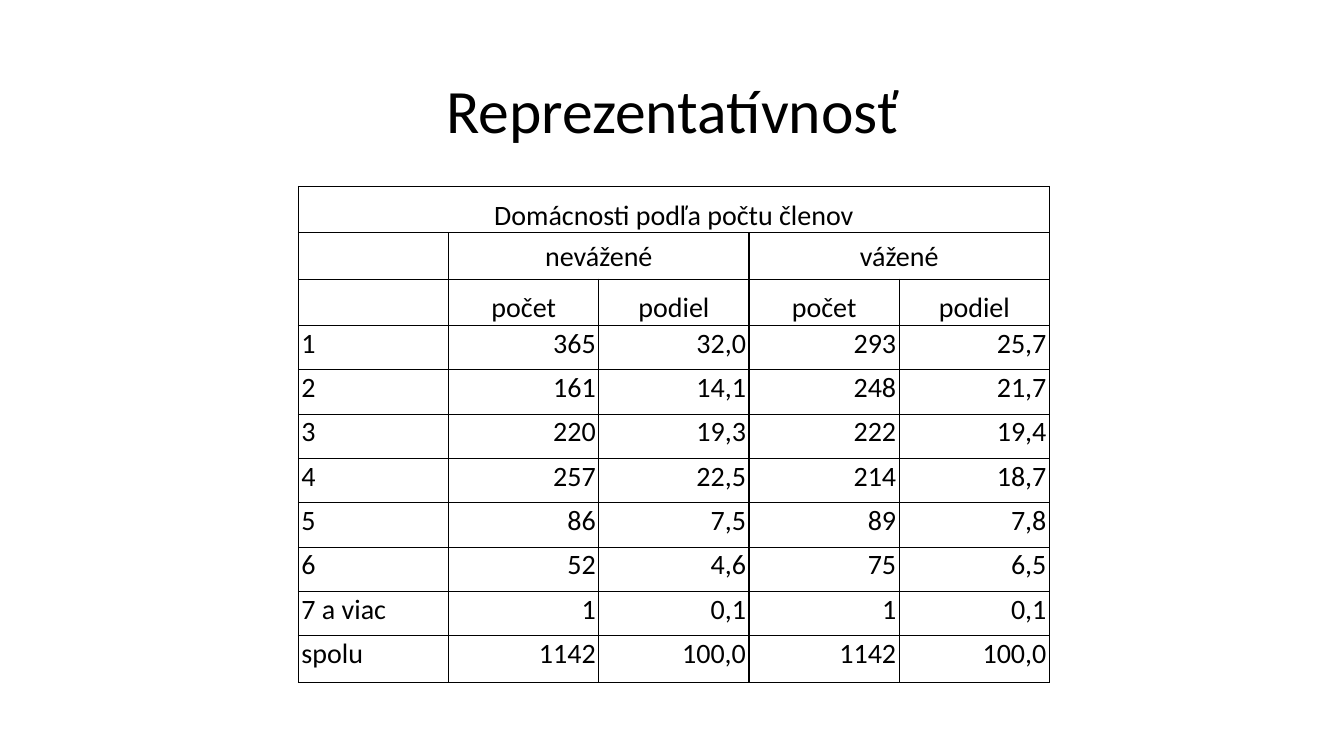
from pptx import Presentation
from pptx.dml.color import RGBColor
from pptx.enum.text import MSO_ANCHOR, PP_ALIGN
from pptx.oxml import parse_xml
from pptx.oxml.ns import nsdecls
from pptx.util import Inches, Pt

COLORS = {"text": "000000", "border": "000000"}
FONT = "Calibri"
COLUMN_WIDTH = 1.49
ROW_HEIGHTS = [0.46] * 3 + [0.44] * 7 + [0.46]
ROWS = [
    ["Domácnosti podľa počtu členov", "", "", "", ""],
    ["", "nevážené", "", "vážené", ""],
    ["", "počet", "podiel", "počet", "podiel"],
    ["1", "365", "32,0", "293", "25,7"],
    ["2", "161", "14,1", "248", "21,7"],
    ["3", "220", "19,3", "222", "19,4"],
    ["4", "257", "22,5", "214", "18,7"],
    ["5", "86", "7,5", "89", "7,8"],
    ["6", "52", "4,6", "75", "6,5"],
    ["7 a viac", "1", "0,1", "1", "0,1"],
    ["spolu", "1142", "100,0", "1142", "100,0"],
]
HEADER_ANCHORS = [MSO_ANCHOR.BOTTOM, MSO_ANCHOR.MIDDLE, MSO_ANCHOR.BOTTOM]
MERGES = [(0, 0, 4), (1, 1, 2), (1, 3, 4)]


def write_text(text_frame, text, size, alignment):
    """Write one formatted run into the first paragraph."""
    paragraph = text_frame.paragraphs[0]
    paragraph.alignment = alignment
    run = paragraph.add_run()
    run.text = text
    run.font.name = FONT
    run.font.size = Pt(size)
    run.font.color.rgb = RGBColor.from_string(COLORS["text"])
    return paragraph


def add_title(slide, text):
    """Place and format the title placeholder."""
    title = slide.shapes.title
    title.left, title.top = Inches(0.92), Inches(0.4)
    title.width, title.height = Inches(11.5), Inches(1.45)
    title.text_frame.vertical_anchor = MSO_ANCHOR.MIDDLE
    paragraph = write_text(title.text_frame, text, 44, PP_ALIGN.CENTER)
    paragraph.line_spacing = 0.9


def add_borders(cell):
    """Draw a thin line on all four sides of a cell."""
    properties = cell._tc.get_or_add_tcPr()
    for index, side in enumerate(["lnL", "lnR", "lnT", "lnB"]):
        line = parse_xml(
            f'<a:{side} {nsdecls("a")} w="{Pt(1)}"><a:solidFill>'
            f'<a:srgbClr val="{COLORS["border"]}"/></a:solidFill></a:{side}>'
        )
        properties.insert(index, line)


def fill_cell(cell, text, row, column):
    """Format a cell by its place in the table and write its text."""
    cell.fill.background()
    add_borders(cell)
    if not text:
        return
    cell.margin_left = cell.margin_right = Inches(0.03)
    cell.margin_top, cell.margin_bottom = Inches(0.01), Inches(0)
    if row < len(HEADER_ANCHORS):
        cell.vertical_anchor = HEADER_ANCHORS[row]
        alignment = PP_ALIGN.CENTER
    else:
        cell.vertical_anchor = MSO_ANCHOR.TOP
        alignment = PP_ALIGN.RIGHT if column else PP_ALIGN.LEFT
    write_text(cell.text_frame, text, 20, alignment)


def add_household_table(slide):
    """Add the table of households by number of members."""
    column_count = len(ROWS[0])
    frame = slide.shapes.add_table(
        len(ROWS), column_count, Inches(2.96), Inches(1.85),
        Inches(COLUMN_WIDTH * column_count), Inches(sum(ROW_HEIGHTS)),
    )
    table = frame.table
    table.first_row = table.horz_banding = False
    for column in table.columns:
        column.width = Inches(COLUMN_WIDTH)
    for row, height in zip(table.rows, ROW_HEIGHTS):
        row.height = Inches(height)
    for row, first, last in MERGES:
        table.cell(row, first).merge(table.cell(row, last))
    for row, texts in enumerate(ROWS):
        for column, text in enumerate(texts):
            fill_cell(table.cell(row, column), text, row, column)


def main():
    """Build the slide and save the presentation."""
    presentation = Presentation()
    presentation.slide_width = Inches(13.33)
    presentation.slide_height = Inches(7.5)
    slide = presentation.slides.add_slide(presentation.slide_layouts[5])
    add_title(slide, "Reprezentatívnosť")
    add_household_table(slide)
    presentation.save("out.pptx")


if __name__ == "__main__":
    main()
